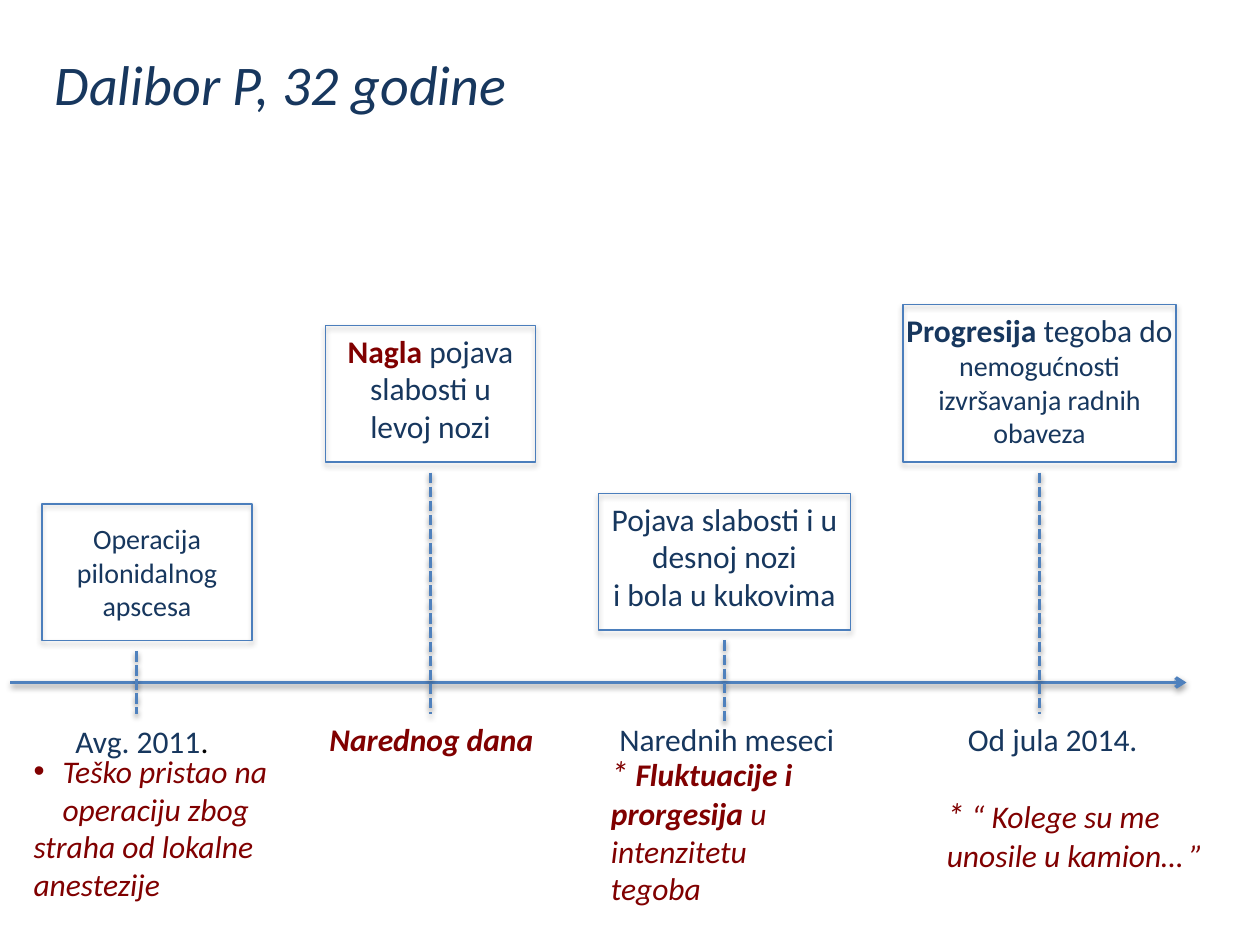
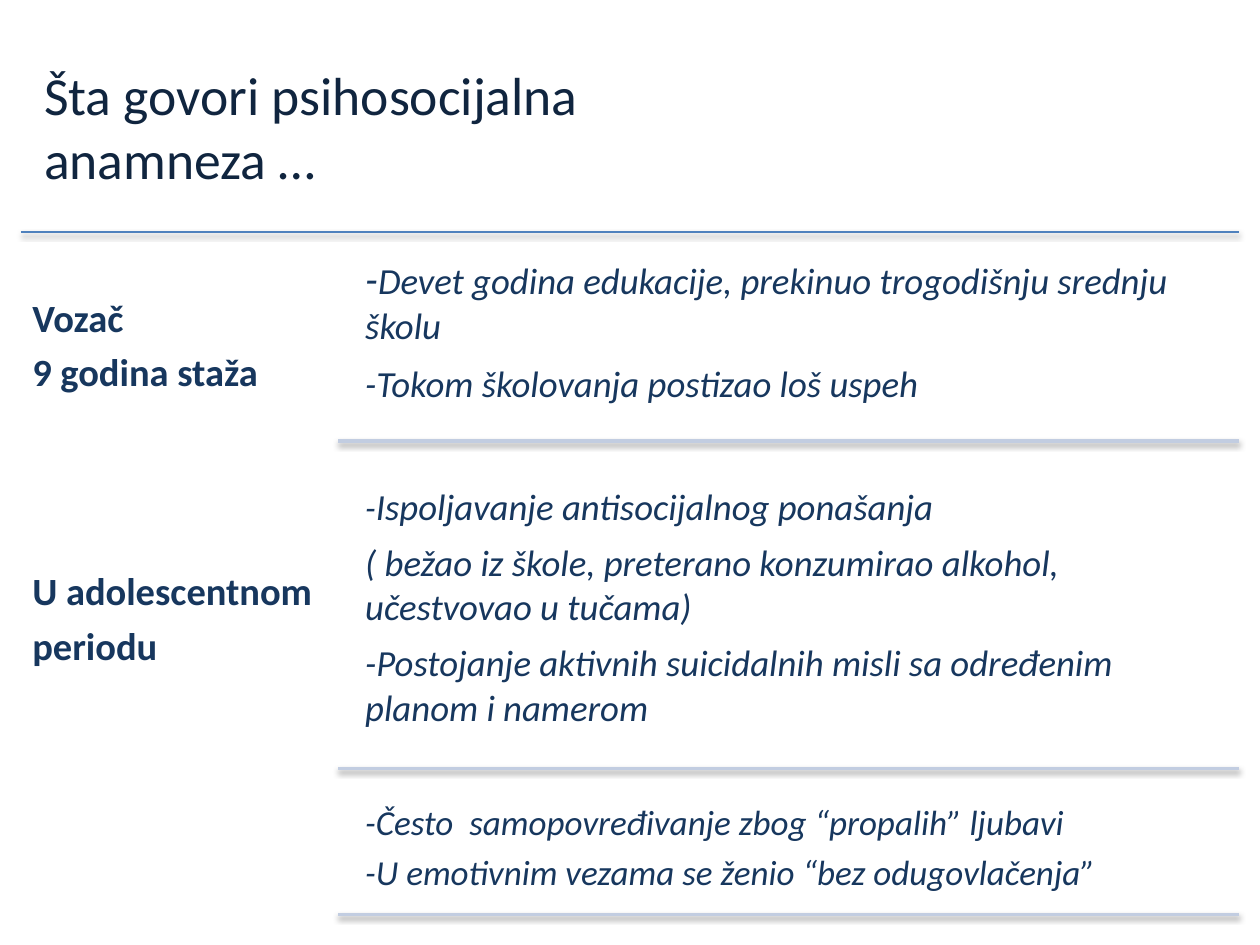
import lxml.etree
import pptx
import pptx.dml.color
import pptx.enum.dml
import pptx.enum.shapes
import pptx.enum.text
import pptx.oxml.ns
import pptx.util

COLORS = {
    "navy": "17375E", "ink": "10253F", "wine": "800000", "black": "000000",
    "axis": "4F81BD", "frame": "4B7EBC", "rule": "C2CDE1",
}
FONT = "Calibri"
COLUMNS, ROWS = 120, 90
CELL = pptx.util.Inches(10) // COLUMNS
LEFT = pptx.enum.text.PP_ALIGN.LEFT
CENTER = pptx.enum.text.PP_ALIGN.CENTER


def cells(*counts):
    """Turn grid counts into lengths."""
    return [round(count * CELL) for count in counts]


def rgb(name):
    return pptx.dml.color.RGBColor.from_string(COLORS[name])


def add_xml(parent, tag, **attributes):
    element = lxml.etree.SubElement(parent, pptx.oxml.ns.qn(tag))
    for key, value in attributes.items():
        element.set(key, str(value))
    return element


# Text
def write(shape, paragraphs, size=18, color="navy", bold=False, italic=False,
          align=LEFT, insets=(0.1, 0.05, 0.1, 0.05), wrap=True, after=0,
          spacing=None, gaps=None, bullets=()):
    """Fill a shape; a paragraph is a string or a list of (text, format) spans.

    gaps maps a paragraph number to its space before, in points.
    """
    frame = shape.text_frame
    frame.word_wrap = wrap
    frame.auto_size = pptx.enum.text.MSO_AUTO_SIZE.NONE
    frame.vertical_anchor = pptx.enum.text.MSO_ANCHOR.TOP
    (frame.margin_left, frame.margin_top, frame.margin_right,
     frame.margin_bottom) = map(pptx.util.Inches, insets)
    for number, spans in enumerate(paragraphs):
        para = frame.add_paragraph() if number else frame.paragraphs[0]
        set_bullet(para, number in bullets)
        para.alignment = align
        para.space_before = pptx.util.Pt((gaps or {}).get(number, 0))
        para.space_after = pptx.util.Pt(after)
        if spacing:
            para.line_spacing = spacing
        if isinstance(spans, str):
            spans = [(spans, {})]
        for text, changes in spans:
            look = dict(size=size, color=color, bold=bold) | changes
            for piece_number, piece in enumerate(text.split("\n")):
                if piece_number:
                    para.add_line_break()
                span = para.add_run()
                span.text = piece
                span.font.name = FONT
                span.font.size = pptx.util.Pt(look["size"])
                span.font.bold = look["bold"]
                span.font.italic = italic
                span.font.color.rgb = rgb(look["color"])


def set_bullet(para, shown):
    properties = para._p.get_or_add_pPr()
    indent = pptx.util.Inches(0.23) if shown else 0
    properties.set("marL", str(indent))
    properties.set("indent", str(-indent))
    if shown:
        add_xml(properties, "a:buFont", typeface="Arial")
        add_xml(properties, "a:buChar", char="•")
    else:
        add_xml(properties, "a:buNone")


def add_text(page, box, paragraphs, **look):
    write(page.shapes.add_textbox(*cells(*box)), paragraphs, **look)


def fill_placeholder(holder, box, paragraphs, **look):
    holder.left, holder.top, holder.width, holder.height = cells(*box)
    write(holder, paragraphs, **look)


# Lines and frames
def add_shadow(shape, strong):
    effects = add_xml(shape._element.spPr, "a:effectLst")
    shadow = add_xml(effects, "a:outerShdw", blurRad=40000,
                     dist=20000 if strong else 23000, dir=5400000, rotWithShape=0)
    tint = add_xml(shadow, "a:srgbClr", val=COLORS["black"])
    add_xml(tint, "a:alpha", val=38000 if strong else 35000)


def add_line(page, start, end, color="axis", width=2, dashed=False, arrow=False):
    line = page.shapes.add_connector(
        pptx.enum.shapes.MSO_CONNECTOR.STRAIGHT, *cells(*start, *end))
    line.line.color.rgb = rgb(color)
    line.line.width = pptx.util.Pt(width)
    if dashed:
        line.line.dash_style = pptx.enum.dml.MSO_LINE.SQUARE_DOT
    if arrow:
        add_xml(line.line._get_or_add_ln(), "a:tailEnd", type="arrow")
    add_shadow(line, strong=width > 1)


def add_frame(page, box):
    frame = page.shapes.add_shape(pptx.enum.shapes.MSO_SHAPE.RECTANGLE, *cells(*box))
    frame.fill.background()
    frame.line.color.rgb = rgb("frame")
    frame.line.width = pptx.util.Pt(0.75)
    add_shadow(frame, strong=False)


def add_page(deck, layout, title, box, **look):
    page = deck.slides.add_slide(deck.slide_layouts[layout])
    fill_placeholder(page.shapes.title, box, [title], **look)
    return page


# Timeline slide
def add_event(page, box, paragraphs, label, label_box, stem=None, stem_end=68,
              drop=0, bleed=0, size=18, label_look=None):
    """Framed event, its dashed stem and its date below the axis."""
    left, top, width, height = box
    stem = stem or left + width / 2
    add_frame(page, box)
    add_text(page, (left - bleed, top + drop, width + 2 * bleed, height - drop),
             paragraphs, size=size, align=CENTER)
    add_line(page, (stem, top + height + 1), (stem, stem_end), dashed=True)
    add_text(page, (*label_box, 4.8), [label], wrap=False, **(label_look or {}))


def build_timeline(deck):
    page = add_page(deck, 1, "Dalibor P, 32 godine", (4, 2.6, 89, 17.4),
                    size=32, italic=True, insets=(0.1, 0.18, 0.1, 0.05))
    add_line(page, (1, 65), (113, 65), arrow=True)

    # Events
    add_event(page, (4, 48, 20, 13), ["Operacija pilonidalnog apscesa"],
              [("Avg. 2011", {}), (".", {"color": "black"})], (6, 68.2, 15.4),
              stem=13, drop=1.1, size=16)
    add_event(page, (31, 31, 20, 13),
              [[("Nagla ", {"color": "wine", "bold": True}),
                ("pojava slabosti u levoj nozi", {})]],
              "Narednog dana", (30.2, 68, 22.8),
              label_look=dict(color="wine", bold=True, italic=True))
    add_event(page, (57, 47, 24, 13),
              ["Pojava slabosti i u desnoj nozi", "i bola u kukovima"],
              "Narednih meseci", (57.8, 68, 23.2), stem_end=69)
    add_event(page, (86, 29, 26, 15),
              [[("Progresija ", {"bold": True}), ("tegoba do", {})],
               [("nemogućnosti izvršavanja radnih obaveza", {"size": 16})]],
              "Od jula 2014.", (91, 68, 18.7), bleed=1)

    # Notes below the axis
    note = dict(color="wine", italic=True)
    star = ("*", {"size": 20})
    fill_placeholder(page.placeholders[1], (2, 71, 28, 16.2),
                     ["Teško pristao na operaciju zbog",
                      "straha od lokalne anestezije"], bullets=(0,), **note)
    add_text(page, (57, 71, 21, 16.2),
             [[star, (" ", {}), ("Fluktuacije i prorgesija ", {"bold": True}),
               ("u intenzitetu tegoba", {})]], **note)
    add_text(page, (89, 75, 30, 8.9),
             [[star, (" “ Kolege su me unosile u kamion… ”", {})]], **note)


# History slide
def add_detail(page, holder_index, box, paragraphs, rule_row, top, size=21,
               after=7, **look):
    """Detail text with the rule that closes its section."""
    fill_placeholder(page.placeholders[holder_index], box, paragraphs, size=size,
                     italic=True, after=after, insets=(0.09, top, 0.09, 0.08), **look)
    add_line(page, (32.2, rule_row), (118, rule_row), color="rule")


def build_history(deck):
    page = add_page(deck, 4, "Šta govori psihosocijalna \nanamneza …",
                    (3, 0, 89, 17.4), size=30.6, color="ink",
                    insets=(0.1, 0.49, 0.1, 0))
    add_line(page, (2, 22.1), (118, 22.1), width=0.75)

    # Topics
    fill_placeholder(page.placeholders[1], (2, 22.1, 30.2, 65.9),
                     ["Vozač", "9 godina staža", "U adolescentnom", "periodu"],
                     size=22, bold=True, spacing=0.9, after=7.4, gaps={2: 94},
                     insets=(0.09, 0.53, 0.09, 0.09))

    # Details
    left, width = 33.7, 84.3
    add_detail(page, 2, (left, 22.8, width, 16.2),
               [[("-", {"size": 24}),
                 ("Devet godina edukacije, prekinuo trogodišnju srednju školu", {})],
                "-Tokom školovanja postizao loš uspeh"],
               rule_row=42, top=0.1, after=8.2)
    add_detail(page, 3, (left, 39.8, width, 30.2),
               [[("-", {"size": 20}), ("Ispoljavanje antisocijalnog ponašanja", {})],
                "( bežao iz škole, preterano konzumirao alkohol, učestvovao u tučama)",
                "-Postojanje aktivnih suicidalnih misli sa određenim planom i namerom"],
               rule_row=73.2, top=0.52)
    add_detail(page, 4, (left, 70.9, width, 16.2),
               ["-Često  samopovređivanje zbog “propalih” ljubavi",
                "-U emotivnim vezama se ženio “bez odugovlačenja”"],
               rule_row=87.1, top=0.48, size=20, spacing=0.9)


def main():
    deck = pptx.Presentation()
    deck.slide_width, deck.slide_height = cells(COLUMNS, ROWS)
    build_timeline(deck)
    build_history(deck)
    deck.save("out.pptx")


if __name__ == "__main__":
    main()
